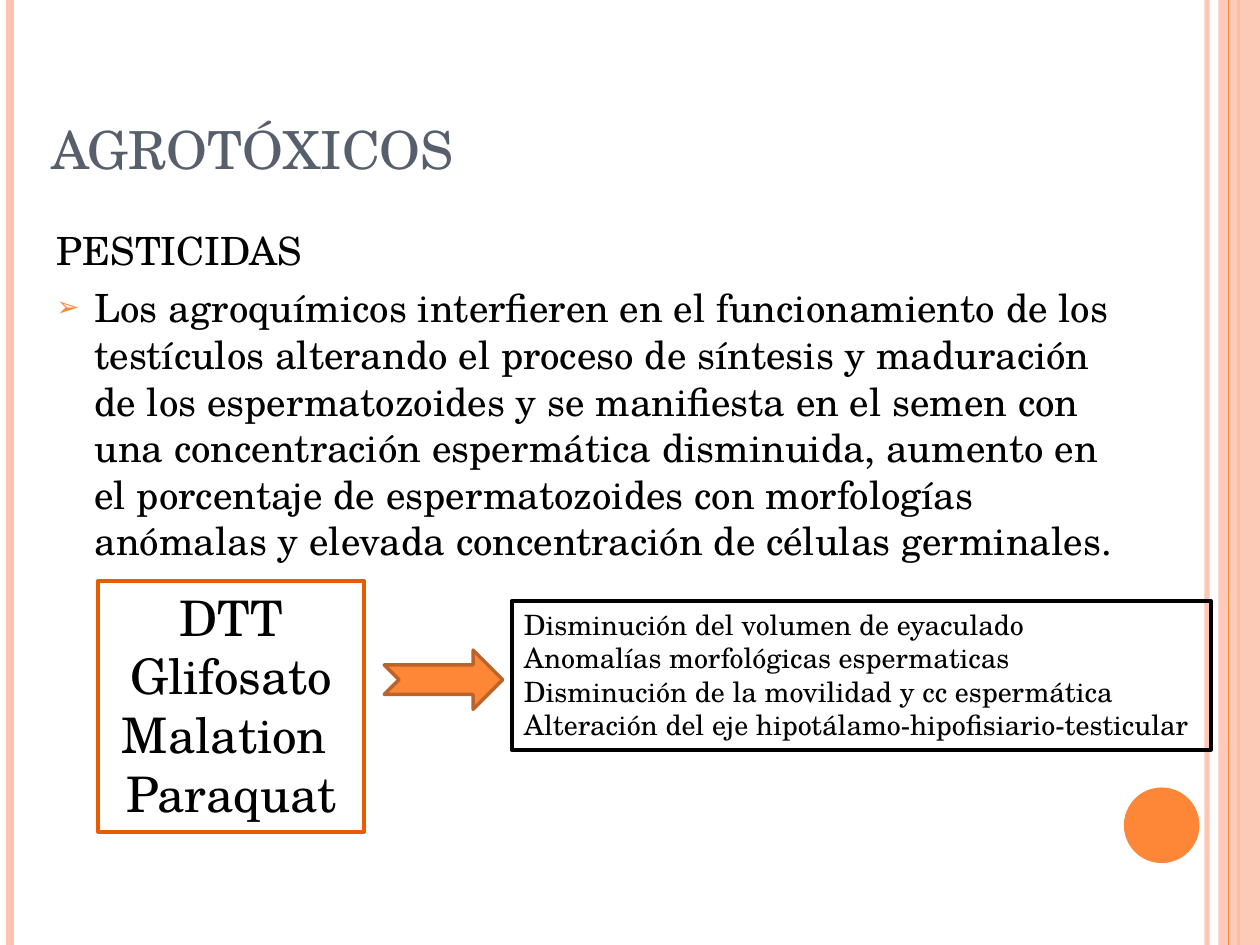
import pptx
import pptx.util
from pptx.dml.color import RGBColor
from pptx.enum.shapes import MSO_CONNECTOR, MSO_SHAPE
from pptx.enum.text import MSO_ANCHOR, MSO_AUTO_SIZE, PP_ALIGN
from pptx.oxml.ns import qn
from lxml import etree

ORANGE = RGBColor(0xFE, 0x86, 0x37)
PEACH = RGBColor(0xFE, 0xC3, 0xAE)
DARK_ORANGE = RGBColor(0xE7, 0x5C, 0x01)
ARROW_EDGE = RGBColor(0xBC, 0x63, 0x29)
SLATE = RGBColor(0x57, 0x5F, 0x6D)
BLACK = RGBColor(0, 0, 0)
FONT = "TeX Gyre Schola"

deck = pptx.Presentation()
deck.slide_width = pptx.util.Inches(10)
deck.slide_height = pptx.util.Inches(7.5)
slide = deck.slides.add_slide(deck.slide_layouts[1])


def add_plain(kind, left, top, width, height, fill=None, edge=None, edge_width=0):
    """Add a shadowless shape, placed in inches; no fill or edge unless given."""
    shape = slide.shapes.add_shape(
        kind, *(pptx.util.Inches(length) for length in (left, top, width, height)))
    shape.shadow.inherit = False
    if fill is None:
        shape.fill.background()
    else:
        shape.fill.solid()
        shape.fill.fore_color.rgb = fill
    if edge is None:
        shape.line.fill.background()
    else:
        shape.line.color.rgb = edge
        shape.line.width = pptx.util.Pt(edge_width)
    return shape


def set_opacity(properties, percent):
    color = next(properties.iter(qn("a:srgbClr")))
    etree.SubElement(color, qn("a:alpha")).set("val", str(percent * 1000))


# Side stripes; the translucent band covers the stripe at 9.83
for x, color, weight, opacity in (
    (9.58, PEACH, 3, 93),
    (0.08, PEACH, 4.5, 100),
    (9.83, ORANGE, 1.5, 100),
    (None, PEACH, 0, 87),
    (9.75, ORANGE, 0.75, 100),
):
    if x is None:
        stripe = add_plain(MSO_SHAPE.RECTANGLE, 9.67, 0, 0.33, 7.5, color)
    else:
        stripe = slide.shapes.add_connector(
            MSO_CONNECTOR.STRAIGHT, pptx.util.Inches(x), 0,
            pptx.util.Inches(x), deck.slide_height)
        stripe.line.color.rgb = color
        stripe.line.width = pptx.util.Pt(weight)
        etree.SubElement(stripe._element.spPr, qn("a:effectLst"))
    if opacity < 100:
        set_opacity(stripe._element.spPr, opacity)

add_plain(MSO_SHAPE.OVAL, 8.92, 6.25, 0.6, 0.6, ORANGE)

# Title
title = slide.shapes.title
title.left, title.top = pptx.util.Inches(0.31), pptx.util.Inches(0.23)
title.width, title.height = pptx.util.Inches(8.17), pptx.util.Inches(1.25)
title.text_frame.text = "AGROTÓXICOS"
title.text_frame.vertical_anchor = MSO_ANCHOR.BOTTOM
title.text_frame.auto_size = MSO_AUTO_SIZE.NONE
heading = title.text_frame.paragraphs[0]
heading.alignment = PP_ALIGN.LEFT
heading.font.name = FONT
heading.font.size = pptx.util.Pt(30)
heading.font.color.rgb = SLATE

# Body: a plain subheading, then one bulleted paragraph
body = slide.placeholders[1]
body.left, body.top = pptx.util.Inches(0.35), pptx.util.Inches(1.75)
body.width, body.height = pptx.util.Inches(8.79), pptx.util.Inches(2.55)
body.text_frame.text = (
    "PESTICIDAS\n"
    "Los agroquímicos interfieren en el funcionamiento de los testículos alterando "
    "el proceso de síntesis y maduración de los espermatozoides y se manifiesta en "
    "el semen con una concentración espermática disminuida, aumento en el porcentaje "
    "de espermatozoides con morfologías anómalas y elevada concentración de células "
    "germinales.")
body.text_frame.auto_size = MSO_AUTO_SIZE.NONE
for paragraph, indent in zip(body.text_frame.paragraphs, (0, 0.3)):
    paragraph.space_before = pptx.util.Pt(6)
    paragraph.font.name = FONT
    paragraph.font.size = pptx.util.Pt(22.2)
    paragraph.font.color.rgb = BLACK
    properties = paragraph._p.get_or_add_pPr()
    properties.set("marL", str(pptx.util.Inches(indent)))
    properties.set("indent", str(-pptx.util.Inches(indent)))
    bullet = []
    if indent:
        bullet_color = etree.Element(qn("a:buClr"))
        etree.SubElement(bullet_color, qn("a:srgbClr")).set("val", str(ORANGE))
        bullet_size = etree.Element(qn("a:buSzPct"))
        bullet_size.set("val", "70000")
        bullet_mark = etree.Element(qn("a:buChar"))
        bullet_mark.set("char", "➢")
        bullet = [bullet_color, bullet_size, bullet_mark]
    else:
        bullet = [etree.Element(qn("a:buNone"))]
    for element in bullet:
        properties.find(qn("a:defRPr")).addprevious(element)

# Pesticides and their effects
for place, edge, size, alignment, lines in (
    ((0.78, 4.61, 2.11, 1.99), DARK_ORANGE, 28, PP_ALIGN.CENTER,
     ("DTT", "Glifosato", "Malation ", "Paraquat")),
    ((4.06, 4.77, 5.55, 1.18), BLACK, 16, PP_ALIGN.LEFT,
     ("Disminución del volumen de eyaculado",
      "Anomalías morfológicas espermaticas",
      "Disminución de la movilidad y cc espermática",
      "Alteración del eje hipotálamo-hipofisiario-testicular")),
):
    box = add_plain(MSO_SHAPE.RECTANGLE, *place, edge=edge, edge_width=2.25)
    box.text_frame.text = "\n".join(lines)
    box.text_frame.word_wrap = True
    box.text_frame.vertical_anchor = MSO_ANCHOR.TOP
    for paragraph in box.text_frame.paragraphs:
        paragraph.alignment = alignment
        paragraph.font.name = FONT
        paragraph.font.size = pptx.util.Pt(size)
        paragraph.font.color.rgb = BLACK

add_plain(MSO_SHAPE.NOTCHED_RIGHT_ARROW, 3.05, 5.16, 0.94, 0.47, ORANGE, ARROW_EDGE, 2)

deck.save("out.pptx")
